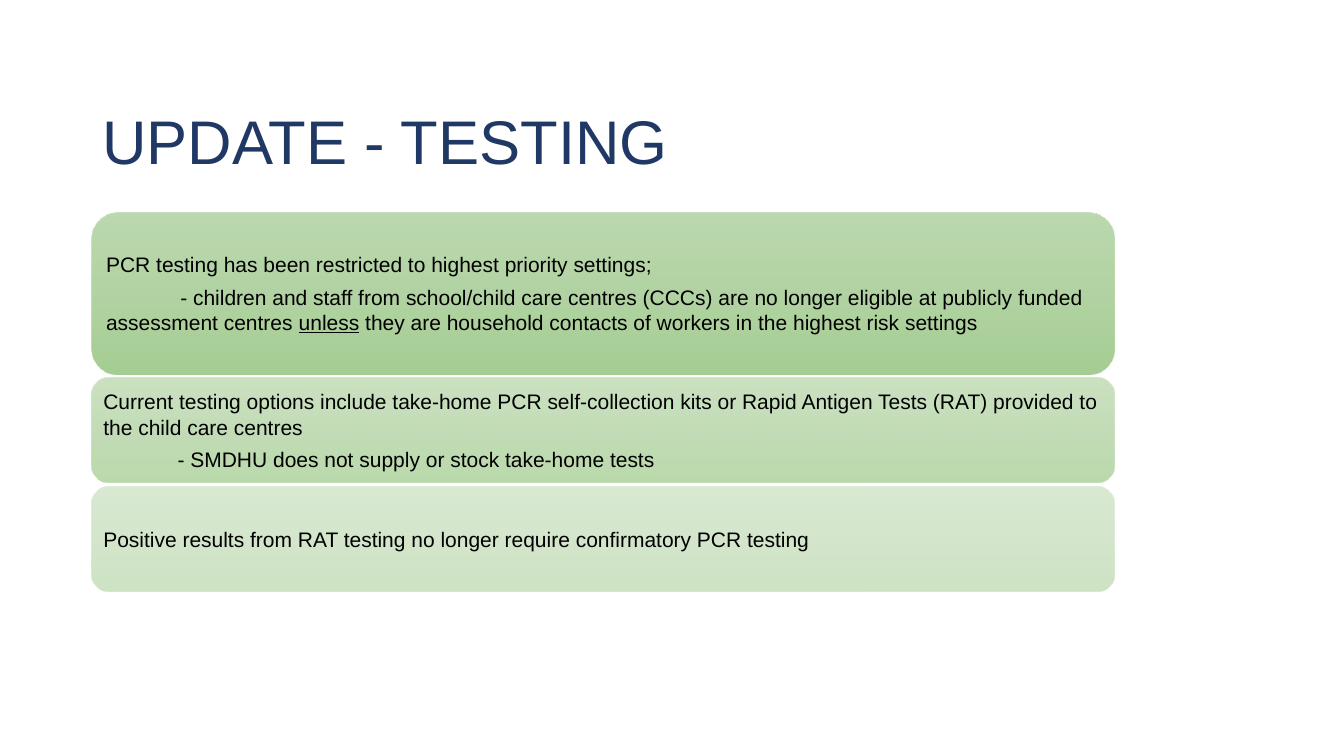
import pptx
import pptx.util
import pptx.dml.color
import pptx.enum.shapes
import pptx.enum.text
import pptx.oxml
import pptx.oxml.ns

Pt = pptx.util.Pt
RGB = pptx.dml.color.RGBColor.from_string
MIDDLE = pptx.enum.text.MSO_ANCHOR.MIDDLE
LEFT = pptx.enum.text.PP_ALIGN.LEFT

# Content: each panel has a height, an opacity in percent and paragraphs;
# a paragraph is (first-line indent, [(text, underlined), ...])
TITLE = "UPDATE - TESTING"
INDENT = 53
PANELS = [
    (115.5, 90, [
        (0, [("PCR testing has been restricted to highest priority settings;", False)]),
        (INDENT, [
            ("- children and staff from school/child care centres (CCCs) are no longer "
             "eligible at publicly funded assessment centres ", False),
            ("unless", True),
            (" they are household contacts of workers in the highest risk settings", False),
        ]),
    ]),
    (75, 70, [
        (0, [("Current testing options include take-home PCR self-collection kits or Rapid "
              "Antigen Tests (RAT) provided to the child care centres", False)]),
        (INDENT, [("- SMDHU does not supply or stock take-home tests", False)]),
    ]),
    (75, 50, [
        (0, [("Positive results from RAT testing no longer require confirmatory PCR testing",
              False)]),
    ]),
]

COLORS = {"title": "203864", "text": "000000",
          "top": "B5D5A7", "middle": "AACE9A", "bottom": "9CC987"}
FONT = "Arial"
PANEL_LEFT, PANEL_TOP, PANEL_WIDTH, PANEL_GAP = 65.75, 151.75, 730, 2.75
PANEL_INSET = 4.4


def style(r, size, color):
    r.font.name, r.font.size = FONT, Pt(size)
    r.font.color.rgb = RGB(COLORS[color])


def fill_gradient(sp, opacity):
    """Vertical three-stop gradient with one opacity."""
    stops = "".join(
        f'<a:gs pos="{pos * 1000}"><a:srgbClr val="{COLORS[name]}">'
        f'<a:alpha val="{opacity * 1000}"/></a:srgbClr></a:gs>'
        for pos, name in ((0, "top"), (50, "middle"), (100, "bottom")))
    grad = pptx.oxml.parse_xml(
        f'<a:gradFill {pptx.oxml.ns.nsdecls("a")} rotWithShape="1">'
        f'<a:gsLst>{stops}</a:gsLst><a:lin ang="5400000" scaled="0"/></a:gradFill>')
    geometry = sp._element.spPr.find(pptx.oxml.ns.qn("a:prstGeom"))
    geometry.addnext(grad)


prs = pptx.Presentation()
prs.slide_width, prs.slide_height = Pt(960), Pt(540)
s = prs.slides.add_slide(prs.slide_layouts[6])

# Title
tf = s.shapes.add_textbox(Pt(66), Pt(70), Pt(828), Pt(60)).text_frame
tf.word_wrap, tf.vertical_anchor = True, MIDDLE
tf.text = TITLE
style(tf.paragraphs[0].runs[0], 44, "title")

# Stacked panels
top = PANEL_TOP
for height, opacity, paragraphs in PANELS:
    sp = s.shapes.add_shape(pptx.enum.shapes.MSO_SHAPE.ROUNDED_RECTANGLE,
                            Pt(PANEL_LEFT), Pt(top), Pt(PANEL_WIDTH), Pt(height))
    sp.shadow.inherit = False
    sp.line.fill.background()
    fill_gradient(sp, opacity)
    tf = sp.text_frame
    tf.word_wrap, tf.vertical_anchor = True, MIDDLE
    tf.margin_left = tf.margin_right = tf.margin_top = tf.margin_bottom = Pt(PANEL_INSET)
    for i, (indent, runs) in enumerate(paragraphs):
        p = tf.add_paragraph() if i else tf.paragraphs[0]
        p.alignment = LEFT
        p.space_before = Pt(5.25 if i else 0)
        p._p.get_or_add_pPr().set("indent", str(Pt(indent)))
        for text, underlined in runs:
            r = p.add_run()
            r.text = text
            style(r, 15, "text")
            if underlined:
                r.font.underline = True
    top += height + PANEL_GAP

prs.save("out.pptx")
